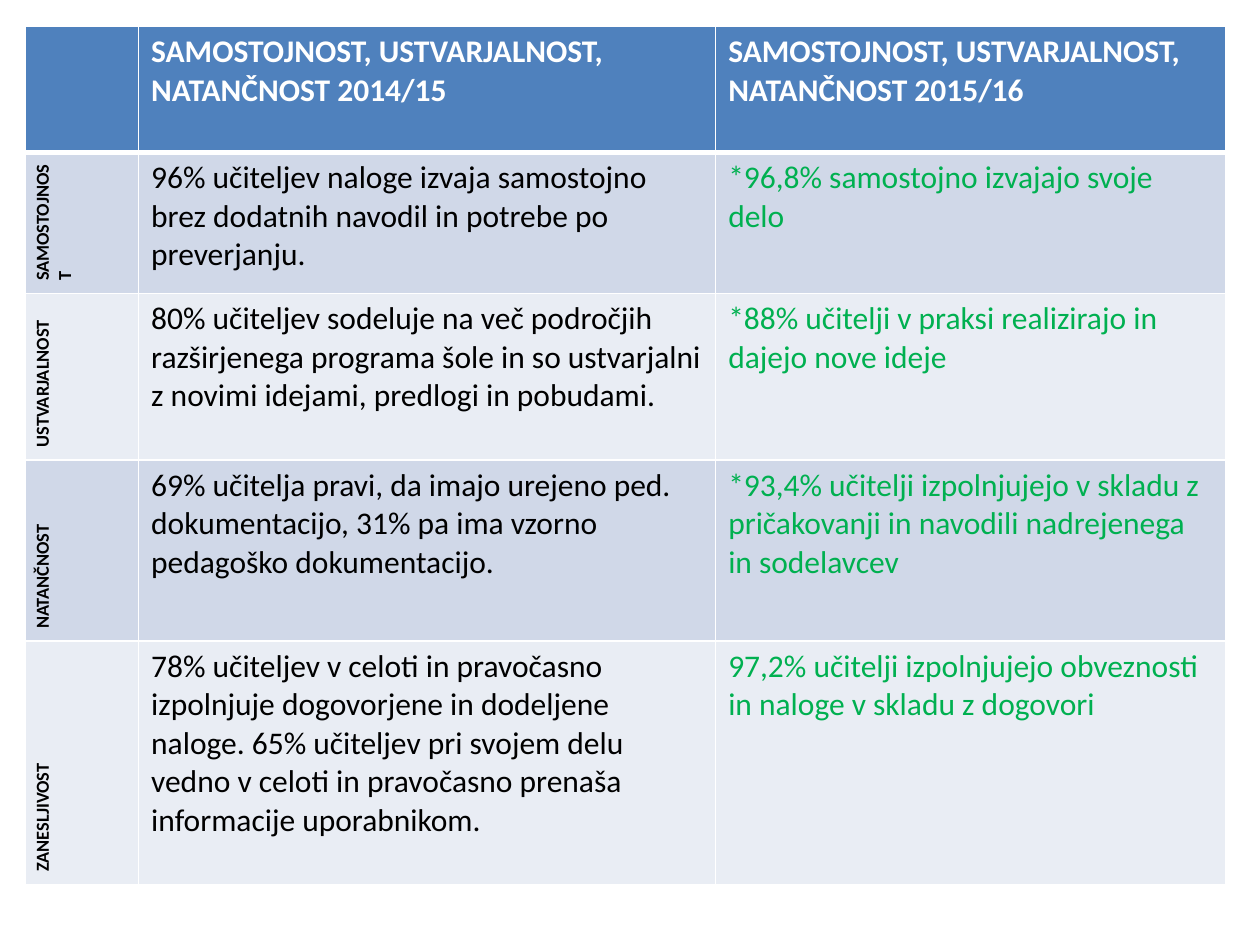
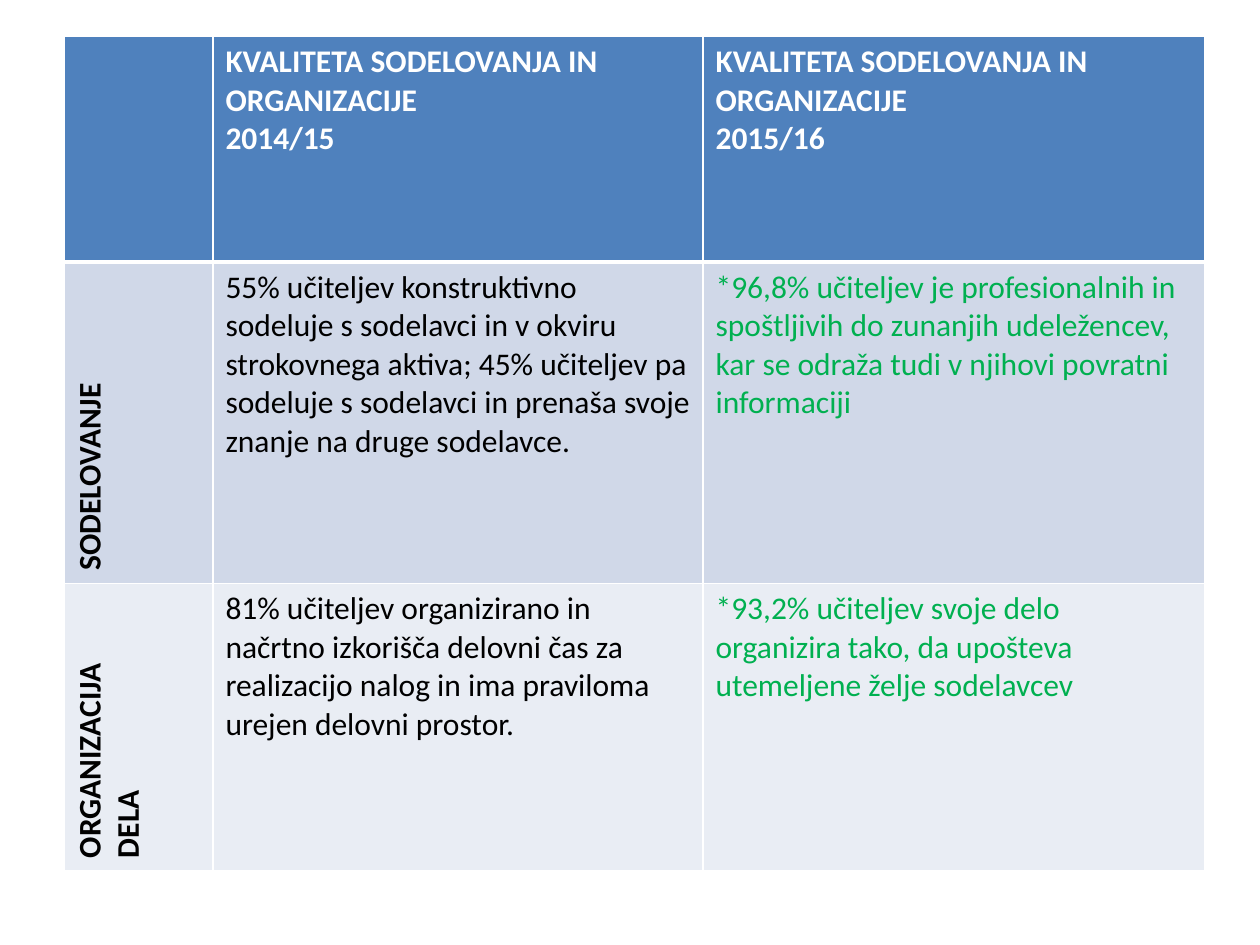
from lxml import etree
from pptx import Presentation
from pptx.dml.color import RGBColor
from pptx.oxml.ns import qn
from pptx.util import Inches, Pt

BLANK_LAYOUT = 6
FONT = "Calibri"
COLORS = {
    "header": "4F81BD",
    "odd_row": "D0D8E8",
    "even_row": "E9EDF4",
    "white": "FFFFFF",
    "text": "000000",
    "new_result": "00B050",
}

INDEPENDENCE = [
    ("", "SAMOSTOJNOST, USTVARJALNOST, NATANČNOST 2014/15",
     "SAMOSTOJNOST, USTVARJALNOST, NATANČNOST 2015/16"),
    ("SAMOSTOJNOST",
     "96% učiteljev naloge izvaja samostojno brez dodatnih navodil in potrebe po preverjanju.",
     "*96,8% samostojno izvajajo svoje delo"),
    ("USTVARJALNOST",
     "80% učiteljev sodeluje na več področjih razširjenega programa šole in so ustvarjalni "
     "z novimi idejami, predlogi in pobudami.",
     "*88% učitelji v praksi realizirajo in dajejo nove ideje"),
    ("NATANČNOST",
     "69% učitelja pravi, da imajo urejeno ped. dokumentacijo, 31% pa ima vzorno "
     "pedagoško dokumentacijo.",
     "*93,4% učitelji izpolnjujejo v skladu z pričakovanji in navodili nadrejenega "
     "in sodelavcev"),
    ("ZANESLJIVOST",
     "78% učiteljev v celoti in pravočasno izpolnjuje dogovorjene in dodeljene naloge. "
     "65% učiteljev pri svojem delu vedno v celoti in pravočasno prenaša informacije "
     "uporabnikom.",
     "97,2% učitelji izpolnjujejo obveznosti in naloge v skladu z dogovori"),
]

COOPERATION = [
    ("", "KVALITETA SODELOVANJA IN ORGANIZACIJE\n2014/15",
     "KVALITETA SODELOVANJA IN ORGANIZACIJE\n2015/16"),
    ("SODELOVANJE",
     "55% učiteljev konstruktivno sodeluje s sodelavci in v okviru strokovnega aktiva; "
     "45% učiteljev pa sodeluje s sodelavci in prenaša svoje znanje na druge sodelavce.",
     "*96,8% učiteljev je profesionalnih in spoštljivih do zunanjih udeležencev, "
     "kar se odraža tudi v njihovi povratni informaciji"),
    ("ORGANIZACIJA DELA",
     "81% učiteljev organizirano in načrtno izkorišča delovni čas za realizacijo nalog "
     "in ima praviloma urejen delovni prostor.",
     "*93,2% učiteljev svoje delo organizira tako, da upošteva utemeljene želje sodelavcev"),
]


def write_text(frame, text, size=18, color="text", bold=False):
    frame.text = text
    for paragraph in frame.paragraphs:
        font = paragraph.font
        for run in paragraph.runs:
            font = run.font
        font.name = FONT
        font.size = Pt(size)
        font.bold = bold
        font.color.rgb = RGBColor.from_string(COLORS[color])


def draw_borders(cell, top, bottom):
    """Give the cell white borders; top and bottom widths are in points."""
    properties = cell._tc.get_or_add_tcPr()
    for side, width in (("L", 1), ("R", 1), ("T", top), ("B", bottom)):
        line = etree.SubElement(properties, qn(f"a:ln{side}"), w=str(Pt(width)))
        fill = etree.SubElement(line, qn("a:solidFill"))
        etree.SubElement(fill, qn("a:srgbClr"), val=COLORS["white"])


class Deck:
    def __init__(self):
        self.presentation = Presentation()
        self.presentation.slide_width = Inches(10)
        self.presentation.slide_height = Inches(7.5)
        self.slide = None

    def add_slide(self):
        layout = self.presentation.slide_layouts[BLANK_LAYOUT]
        self.slide = self.presentation.slides.add_slide(layout)

    def add_comparison(self, content, left, top, widths, heights, label_size):
        """Add a table of row labels and the results of two school years."""
        table = self.slide.shapes.add_table(
            len(heights), len(widths), Inches(left), Inches(top),
            Inches(sum(widths)), Inches(sum(heights))).table
        for column, width in zip(table.columns, widths):
            column.width = Inches(width)
        for row, height in zip(table.rows, heights):
            row.height = Inches(height)
        for row, texts in enumerate(content):
            for column, text in enumerate(texts):
                self.fill_cell(table.cell(row, column), row, column, text, label_size)

    def fill_cell(self, cell, row, column, text, label_size):
        is_header, is_label = row == 0, column == 0
        draw_borders(cell, top=3 if row == 1 else 1, bottom=3 if is_header else 1)
        band = "header" if is_header else "odd_row" if row % 2 else "even_row"
        cell.fill.solid()
        cell.fill.fore_color.rgb = RGBColor.from_string(COLORS[band])
        if is_header:
            write_text(cell.text_frame, text, color="white", bold=True)
        elif is_label:
            cell._tc.get_or_add_tcPr().set("vert", "vert270")
            write_text(cell.text_frame, text, size=label_size, bold=True)
        else:
            write_text(cell.text_frame, text, color="text" if column == 1 else "new_result")


def main():
    deck = Deck()
    deck.add_slide()
    deck.add_comparison(INDEPENDENCE, 0.2, 0.21, widths=[0.9, 4.58, 4.05],
                        heights=[1, 1.12, 1.32, 1.44, 1.93], label_size=10.5)
    deck.add_slide()
    deck.add_comparison(COOPERATION, 0.51, 0.29, widths=[1.18, 3.89, 3.98],
                        heights=[1.79, 2.55, 2.28], label_size=18)
    deck.presentation.save("out.pptx")


if __name__ == "__main__":
    main()
